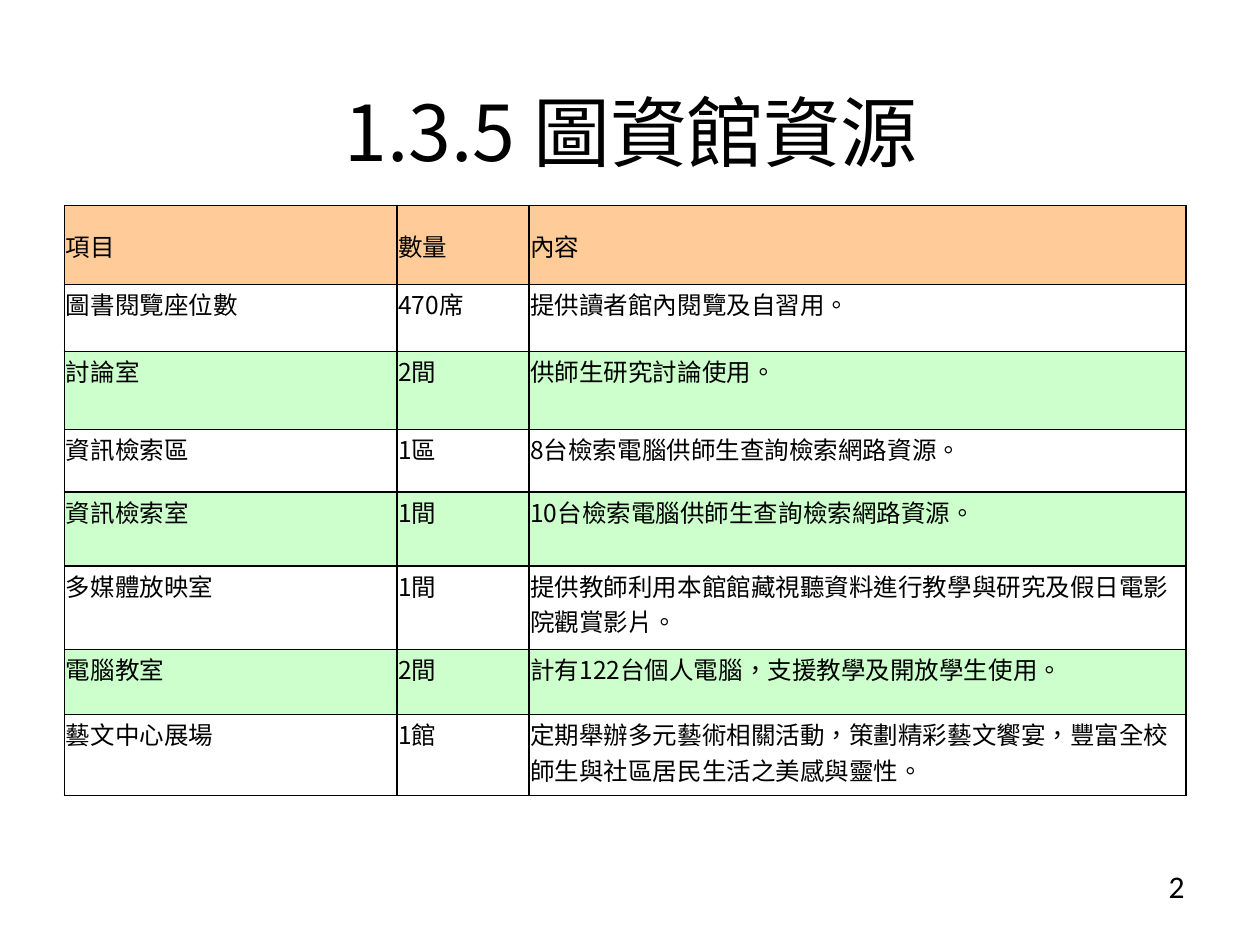
from dataclasses import dataclass

from lxml.etree import SubElement
from pptx import Presentation
from pptx.dml.color import RGBColor
from pptx.enum.lang import MSO_LANGUAGE_ID
from pptx.enum.text import MSO_ANCHOR, PP_ALIGN
from pptx.oxml import parse_xml
from pptx.oxml.ns import nsdecls, qn
from pptx.util import Cm, Pt


@dataclass(frozen=True)
class Theme:
    font: str = "Noto Sans CJK SC"
    number_font: str = "Calibri"
    title_size: int = 44
    body_size: int = 14
    number_size: int = 18
    ink: str = "000000"
    header: str = "FFCC99"
    band: str = "CCFFCC"
    paper: str = "FFFFFF"
    border: int = 1


HEADERS = ("項目", "數量", "內容")
RESOURCES = (
    ("圖書閱覽座位數", "470席", "提供讀者館內閱覽及自習用。"),
    ("討論室", "2間", "供師生研究討論使用。"),
    ("資訊檢索區", "1區", "8台檢索電腦供師生查詢檢索網路資源。"),
    ("資訊檢索室", "1間", "10台檢索電腦供師生查詢檢索網路資源。"),
    ("多媒體放映室", "1間", "提供教師利用本館館藏視聽資料進行教學與研究及假日電影院觀賞影片。"),
    ("電腦教室", "2間", "計有122台個人電腦，支援教學及開放學生使用。"),
    ("藝文中心展場", "1館", "定期舉辦多元藝術相關活動，策劃精彩藝文饗宴，豐富全校師生與社區居民生活之美感與靈性。"),
)
COLUMN_WIDTHS = (6.7, 2.66, 13.25)
ROW_HEIGHTS = (1.6, 1.35, 1.57, 1.26, 1.49, 1.68, 1.31, 1.64)


class SlideBuilder:
    def __init__(self, slide, theme):
        self.slide = slide
        self.theme = theme

    def style(self, p, size, font):
        for r in p.runs:
            r.font.size = Pt(size)
            r.font.color.rgb = RGBColor.from_string(self.theme.ink)
            r.font.name = font
            r.font.language_id = MSO_LANGUAGE_ID.TRADITIONAL_CHINESE
            SubElement(r.font._element, qn("a:ea")).set("typeface", font)

    def text(self, text, left, top, width, height, size, font, align, anchor):
        sp = self.slide.shapes.add_textbox(Cm(left), Cm(top), Cm(width), Cm(height))
        tf = sp.text_frame
        tf.word_wrap = True
        tf.vertical_anchor = anchor
        tf.text = text
        p = tf.paragraphs[0]
        p.alignment = align
        self.style(p, size, font)

    def borders(self, cell):
        tc_pr = cell._tc.get_or_add_tcPr()
        for index, side in enumerate("LRTB"):
            tc_pr.insert(index, parse_xml(
                f'<a:ln{side} {nsdecls("a")} w="{Pt(self.theme.border)}"><a:solidFill>'
                f'<a:srgbClr val="{self.theme.ink}"/></a:solidFill></a:ln{side}>'
            ))

    def cell(self, cell, text, fill, anchor):
        cell.margin_left = cell.margin_right = cell.margin_top = Cm(0.03)
        cell.margin_bottom = 0
        cell.vertical_anchor = anchor
        cell.fill.solid()
        cell.fill.fore_color.rgb = RGBColor.from_string(fill)
        self.borders(cell)
        cell.text_frame.text = text
        self.style(cell.text_frame.paragraphs[0], self.theme.body_size, self.theme.font)

    def table(self, rows, left, top, widths, heights):
        table = self.slide.shapes.add_table(
            len(rows), len(widths), Cm(left), Cm(top), Cm(sum(widths)), Cm(sum(heights))
        ).table
        for column, width in zip(table.columns, widths):
            column.width = Cm(width)
        for i, (row, height) in enumerate(zip(rows, heights)):
            table.rows[i].height = Cm(height)
            fill = self.theme.paper if i % 2 else self.theme.band
            anchor = MSO_ANCHOR.TOP
            if i == 0:
                fill, anchor = self.theme.header, MSO_ANCHOR.MIDDLE
            for j, text in enumerate(row):
                self.cell(table.cell(i, j), text, fill, anchor)


def main():
    prs = Presentation()
    prs.slide_width, prs.slide_height = Cm(25.4), Cm(19.05)
    theme = Theme()
    s = SlideBuilder(prs.slides.add_slide(prs.slide_layouts[6]), theme)
    s.text("2", 18.2, 17.35, 5.93, 1.32, theme.number_size, theme.number_font,
           PP_ALIGN.RIGHT, MSO_ANCHOR.TOP)
    s.text("1.3.5 圖資館資源", 1.3, 1.65, 22.86, 1.98, theme.title_size, theme.font,
           PP_ALIGN.CENTER, MSO_ANCHOR.MIDDLE)
    s.table((HEADERS, *RESOURCES), 1.3, 4.14, COLUMN_WIDTHS, ROW_HEIGHTS)
    prs.save("out.pptx")


if __name__ == "__main__":
    main()
